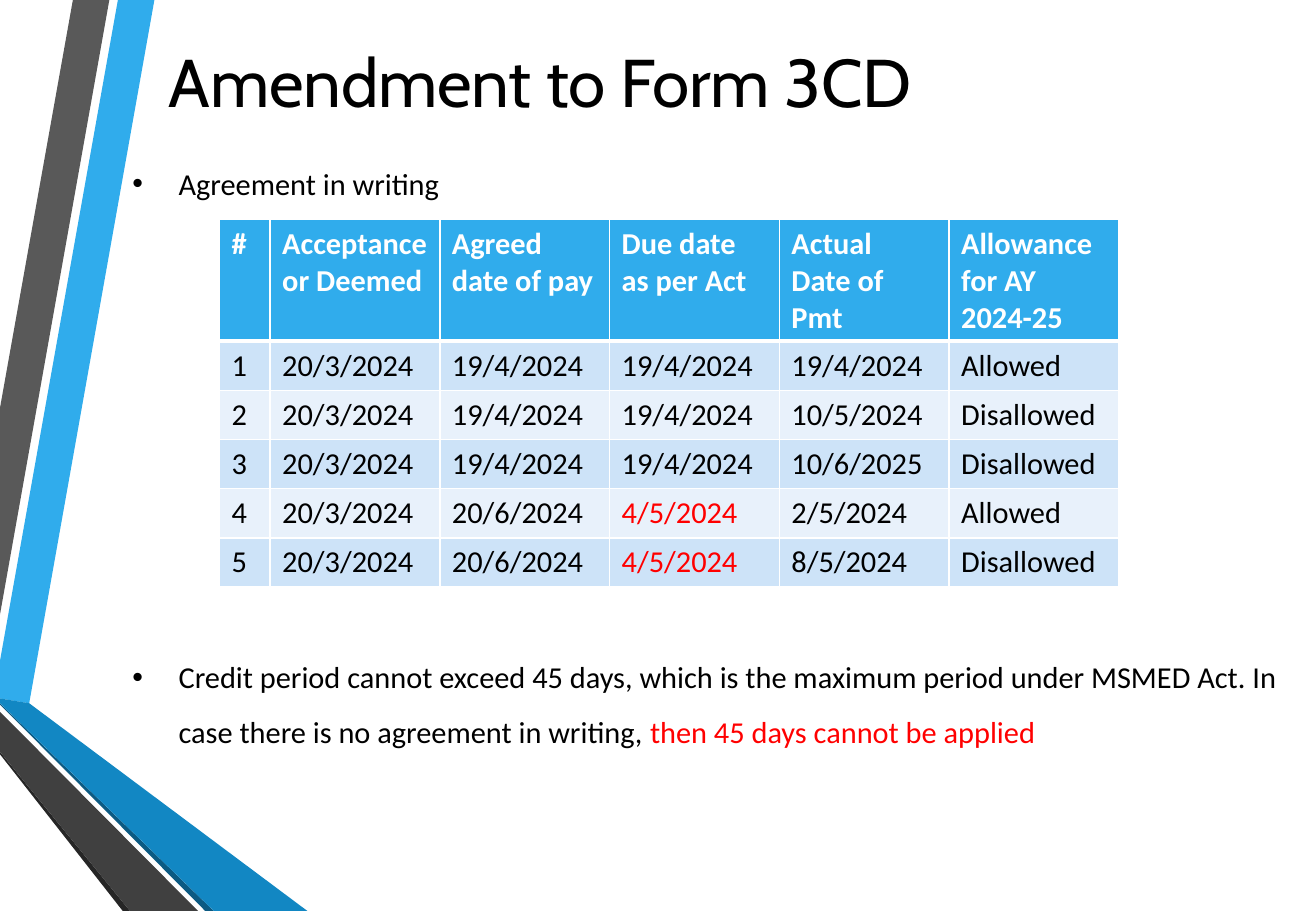
from dataclasses import dataclass

from lxml import etree
from pptx import Presentation
from pptx import util as u
from pptx.dml import color
from pptx.enum import text
from pptx.oxml import ns

SLIDE_WIDTH = u.Inches(10.83)
SLIDE_HEIGHT = u.Inches(7.5)


@dataclass(frozen=True)
class Theme:
    heading_font: str = "Cabin"
    body_font: str = "Calibri"
    heading_size: float = 40
    body_size: float = 18
    ink: str = "000000"
    alert: str = "FF0000"
    white: str = "FFFFFF"
    sky: str = "30ACEC"
    bands: tuple[str, str] = ("CDE3F8", "E8F1FB")


@dataclass(frozen=True)
class Area:
    left: float
    top: float
    width: float
    height: float

    def box(self) -> tuple[int, int, int, int]:
        return across(self.left), down(self.top), across(self.width), down(self.height)


@dataclass(frozen=True)
class Ribbon:
    fill: str
    corners: tuple[tuple[float, float], ...]


@dataclass(frozen=True)
class Phrase:
    wording: str
    tint: str


@dataclass(frozen=True)
class Bullet:
    space_before: float
    phrases: tuple[Phrase, ...]


THEME = Theme()
TITLE_AREA = Area(12.84, 4.2, 86.52, 9.2)
POINTS_AREA = Area(9.97, 15.33, 87.72, 73.47)
SCHEDULE_AREA = Area(16.67, 24.05, 68.35, 40.4)
NUMBER_WIDTH = 3.85
HEADER_HEIGHT = 13.4

RIBBONS = (
    Ribbon(THEME.sky, ((0, 72.53), (0, 76.67), (2.22, 77.2), (11.73, 0), (8.96, 0))),
    Ribbon("595959", ((8.31, 0), (5.54, 0), (0, 44.8), (0, 67.47))),
    Ribbon("262626", ((0, 82.53), (0, 82.8), (9.33, 100), (9.88, 100))),
    Ribbon("0C5A82", ((0, 77.2), (0, 77.33), (15.6, 100), (16.25, 100))),
    Ribbon("1287C3", ((0, 77.2), (16.25, 100), (23.36, 100), (2.22, 77.2), (0, 76.67))),
    Ribbon("404040", ((0, 82.53), (9.88, 100), (15.05, 100), (0, 78.13))),
)

BULLETS = (
    Bullet(4.2, (Phrase("Agreement in writing", THEME.ink),)),
    Bullet(260, (
        Phrase("Credit period cannot exceed 45 days, which is the maximum period under "
               "MSMED Act. In case there is no agreement in writing, ", THEME.ink),
        Phrase("then 45 days cannot be applied", THEME.alert),
    )),
)

HEADINGS = ("#", "Acceptance or Deemed", "Agreed date of pay", "Due date as per Act",
            "Actual Date of Pmt", "Allowance for AY 2024-25")
PAYMENTS = (
    ("1", "20/3/2024", "19/4/2024", "19/4/2024", "19/4/2024", "Allowed"),
    ("2", "20/3/2024", "19/4/2024", "19/4/2024", "10/5/2024", "Disallowed"),
    ("3", "20/3/2024", "19/4/2024", "19/4/2024", "10/6/2025", "Disallowed"),
    ("4", "20/3/2024", "20/6/2024", "4/5/2024", "2/5/2024", "Allowed"),
    ("5", "20/3/2024", "20/6/2024", "4/5/2024", "8/5/2024", "Disallowed"),
)
CAPPED_DUE_DATE = "4/5/2024"


def across(percent: float) -> int:
    return round(SLIDE_WIDTH * percent / 100)


def down(percent: float) -> int:
    return round(SLIDE_HEIGHT * percent / 100)


def rgb(code: str) -> color.RGBColor:
    return color.RGBColor.from_string(code)


def set_font(font, name: str, size: float, tint: str, bold: bool = False) -> None:
    font.name = name
    font.size = u.Pt(size)
    font.bold = bold
    font.color.rgb = rgb(tint)


def draw_ribbon(slide, ribbon: Ribbon) -> None:
    start, *rest = [(across(x), down(y)) for x, y in ribbon.corners]
    outline = slide.shapes.build_freeform(*start)
    outline.add_line_segments(rest, close=True)
    band = outline.convert_to_shape()
    band.shadow.inherit = False
    band.fill.solid()
    band.fill.fore_color.rgb = rgb(ribbon.fill)
    band.line.fill.background()


def write_title(slide, wording: str) -> None:
    title = slide.shapes.title
    title.left, title.top, title.width, title.height = TITLE_AREA.box()
    frame = title.text_frame
    frame.margin_left = frame.margin_right = frame.margin_top = frame.margin_bottom = 0
    frame.vertical_anchor = text.MSO_ANCHOR.MIDDLE
    frame.text = wording
    heading = frame.paragraphs[0]
    heading.alignment = text.PP_ALIGN.LEFT
    set_font(heading.font, THEME.heading_font, THEME.heading_size, THEME.ink)
    heading.runs[0].font._element.set("spc", "-10")


def write_bullet(paragraph, bullet: Bullet) -> None:
    properties = paragraph._p.get_or_add_pPr()
    properties.set("marL", str(u.Inches(0.39)))
    properties.set("indent", str(u.Inches(-0.38)))
    etree.SubElement(properties, ns.qn("a:buFont"), typeface="Arial")
    etree.SubElement(properties, ns.qn("a:buChar"), char="•")
    paragraph.line_spacing = 1.5
    paragraph.space_before = u.Pt(bullet.space_before)
    set_font(paragraph.font, THEME.body_font, THEME.body_size, THEME.ink)
    for phrase in bullet.phrases:
        run = paragraph.add_run()
        run.text = phrase.wording
        if phrase.tint != THEME.ink:
            run.font.color.rgb = rgb(phrase.tint)


def write_points(slide) -> None:
    frame = slide.shapes.add_textbox(*POINTS_AREA.box()).text_frame
    frame.word_wrap = True
    frame.margin_left = frame.margin_right = frame.margin_bottom = 0
    frame.margin_top = u.Inches(0.06)
    for index, bullet in enumerate(BULLETS):
        write_bullet(frame.add_paragraph() if index else frame.paragraphs[0], bullet)


def draw_borders(cell, top: float, bottom: float) -> None:
    properties = cell._tc.get_or_add_tcPr()
    for side, width in (("L", 1), ("R", 1), ("T", top), ("B", bottom)):
        edge = etree.SubElement(properties, ns.qn(f"a:ln{side}"), w=str(u.Pt(width)))
        fill = etree.SubElement(edge, ns.qn("a:solidFill"))
        etree.SubElement(fill, ns.qn("a:srgbClr"), val=THEME.white)


def fill_cell(cell, wording: str, row: int) -> None:
    header = row == 0
    draw_borders(cell, 3 if row == 1 else 1, 3 if header else 1)
    cell.fill.solid()
    cell.fill.fore_color.rgb = rgb(THEME.sky if header else THEME.bands[(row - 1) % 2])
    cell.text = wording
    tint = THEME.white if header else THEME.alert if wording == CAPPED_DUE_DATE else THEME.ink
    set_font(cell.text_frame.paragraphs[0].font, THEME.body_font, THEME.body_size, tint, header)


def draw_schedule(slide) -> None:
    rows = (HEADINGS, *PAYMENTS)
    schedule = slide.shapes.add_table(len(rows), len(HEADINGS), *SCHEDULE_AREA.box()).table
    date_width = (SCHEDULE_AREA.width - NUMBER_WIDTH) / (len(HEADINGS) - 1)
    payment_height = (SCHEDULE_AREA.height - HEADER_HEIGHT) / len(PAYMENTS)
    for index, column in enumerate(schedule.columns):
        column.width = across(date_width if index else NUMBER_WIDTH)
    for row, wordings in enumerate(rows):
        schedule.rows[row].height = down(payment_height if row else HEADER_HEIGHT)
        for column, wording in enumerate(wordings):
            fill_cell(schedule.cell(row, column), wording, row)


def main() -> None:
    deck = Presentation()
    deck.slide_width, deck.slide_height = SLIDE_WIDTH, SLIDE_HEIGHT
    slide = deck.slides.add_slide(deck.slide_layouts[5])
    for ribbon in RIBBONS:
        draw_ribbon(slide, ribbon)
    write_title(slide, "Amendment to Form 3CD")
    write_points(slide)
    draw_schedule(slide)
    deck.save("out.pptx")


if __name__ == "__main__":
    main()
